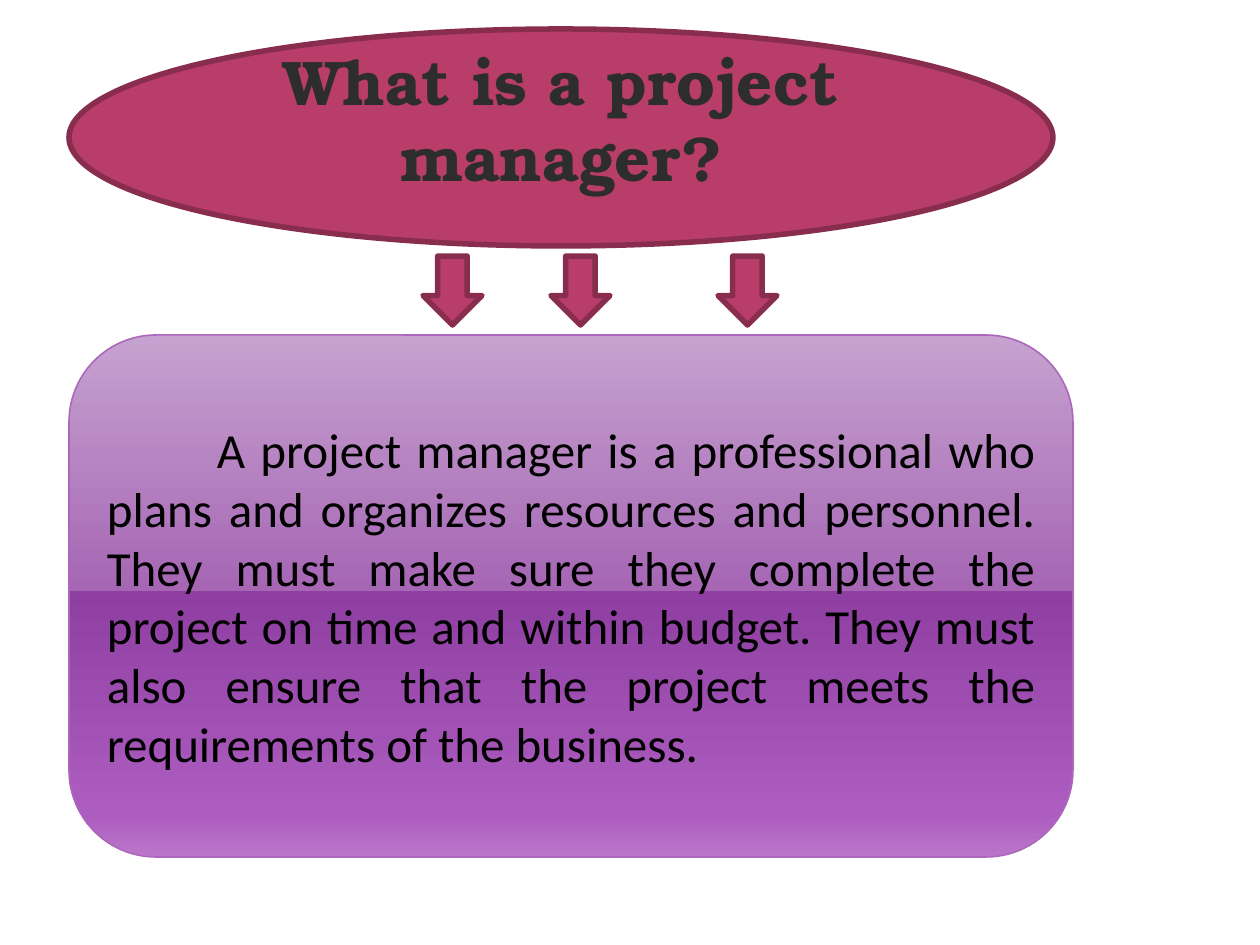
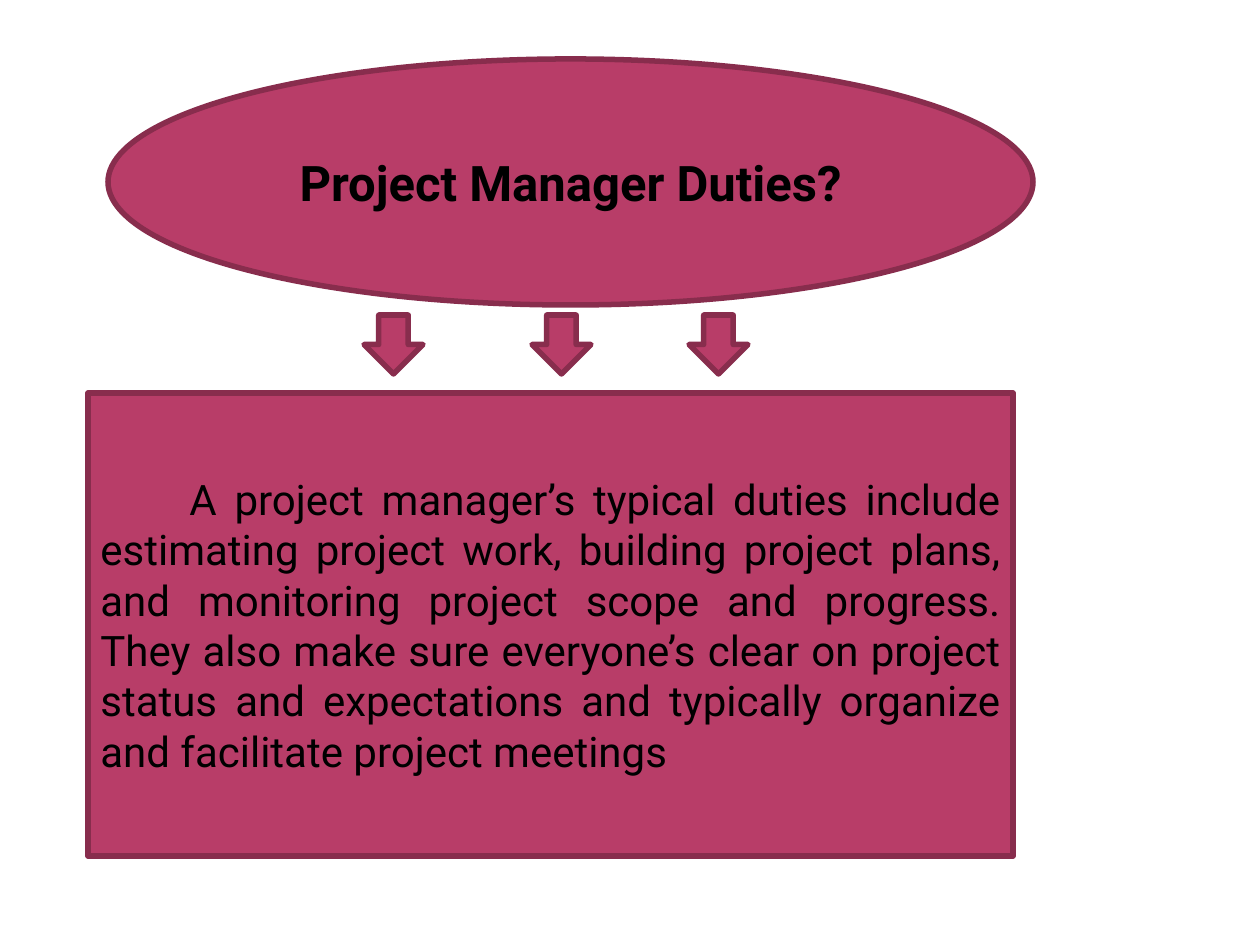
import dataclasses
import typing

import lxml.etree
import pptx
import pptx.dml.color
import pptx.enum.shapes
import pptx.enum.text
import pptx.oxml.ns
import pptx.util

KIND = pptx.enum.shapes.MSO_SHAPE
ALIGN = pptx.enum.text.PP_ALIGN
SCALE = 914400 / 126
COLOR = {
    "rose": "B83D68", "wine": "882D4D", "lilac": "AC66BB",
    "ink": "000000", "coal": "2D2D2D",
}
GLOSS = [(0, "C6A2D0"), (49, "A666B4"), (49, "8F3EA1"), (92, "AD5DBF"), (100, "BA76CA")]


@dataclasses.dataclass
class Box:
    left: int
    top: int
    width: int
    height: int


@dataclasses.dataclass
class Page:
    title: str
    head: Box
    style: dict[str, typing.Any]
    body: str
    panel: Box
    text: dict[str, typing.Any]
    marks: list[Box]
    glossy: bool = False


def px(size: float) -> int:
    return round(size * SCALE)


def tint(name: str) -> pptx.dml.color.RGBColor:
    return pptx.dml.color.RGBColor.from_string(COLOR[name])


def draw(slide, kind, box: Box, line: str = "wine", weight: float = 3.15):
    shape = slide.shapes.add_shape(
        kind, px(box.left), px(box.top), px(box.width), px(box.height))
    shape.shadow.inherit = False
    shape.fill.solid()
    shape.fill.fore_color.rgb = tint("rose")
    shape.line.color.rgb = tint(line)
    shape.line.width = pptx.util.Pt(weight)
    return shape


def shine(shape) -> None:
    """Give the shape a glossy fill with a hard edge near its middle."""
    shape.fill.gradient()
    shape.fill.gradient_angle = 270
    stops = shape._element.spPr.find(".//" + pptx.oxml.ns.qn("a:gsLst"))
    for stop in list(stops):
        stops.remove(stop)
    for place, color in GLOSS:
        stop = lxml.etree.SubElement(stops, pptx.oxml.ns.qn("a:gs"), pos=str(place * 1000))
        lxml.etree.SubElement(stop, pptx.oxml.ns.qn("a:srgbClr"), val=color)


def write(shape, text: str, *, font: str, size: int, color: str = "ink",
          bold: bool = False, align=ALIGN.CENTER, indent: int = 0, lift: int = 0) -> None:
    """Set centred text; lift adds space below it, indent moves its first line."""
    frame = shape.text_frame
    frame.word_wrap = True
    frame.vertical_anchor = pptx.enum.text.MSO_ANCHOR.MIDDLE
    frame.margin_bottom += px(lift)
    para = frame.paragraphs[0]
    para.alignment = align
    if indent:
        para._p.get_or_add_pPr().set("indent", str(px(indent)))
    run = para.add_run()
    run.text = text
    run.font.name = font
    run.font.size = pptx.util.Pt(size)
    run.font.bold = bold
    run.font.color.rgb = tint(color)


def build(deck, page: Page) -> None:
    slide = deck.slides.add_slide(deck.slide_layouts[6])
    write(draw(slide, KIND.OVAL, page.head), page.title, bold=True, **page.style)
    if page.glossy:
        panel = draw(slide, KIND.ROUNDED_RECTANGLE, page.panel, "lilac", 0.9)
        shine(panel)
    else:
        panel = draw(slide, KIND.RECTANGLE, page.panel)
    write(panel, page.body, align=ALIGN.JUSTIFY, **page.text)
    for mark in page.marks:
        draw(slide, KIND.DOWN_ARROW, mark)


PAGES = [
    Page(
        title="What is a project manager?",
        head=Box(69, 29, 984, 217),
        style={"font": "TeX Gyre Bonum", "size": 36, "color": "coal", "lift": 38},
        body="A project manager is a professional who plans and organizes resources "
             "and personnel. They must make sure they complete the project on time and "
             "within budget. They must also ensure that the project meets the "
             "requirements of the business.",
        panel=Box(69, 335, 1004, 522),
        text={"font": "Calibri", "size": 28, "indent": 110},
        marks=[Box(left, 256, 59, 69) for left in (423, 551, 718)],
        glossy=True,
    ),
    Page(
        title="Project Manager Duties?",
        head=Box(108, 59, 925, 246),
        style={"font": "Roboto", "size": 28},
        body="A project manager’s typical duties include estimating project work, "
             "building project plans, and monitoring project scope and progress. They "
             "also make sure everyone’s clear on project status and expectations and "
             "typically organize and facilitate project meetings",
        panel=Box(88, 393, 925, 463),
        text={"font": "Roboto", "size": 24, "indent": 89},
        marks=[Box(left, 315, 59, 59) for left in (364, 532, 689)],
    ),
]


def main() -> None:
    deck = pptx.Presentation()
    deck.slide_width, deck.slide_height = px(1260), px(945)
    for page in PAGES:
        build(deck, page)
    deck.save("out.pptx")


if __name__ == "__main__":
    main()
